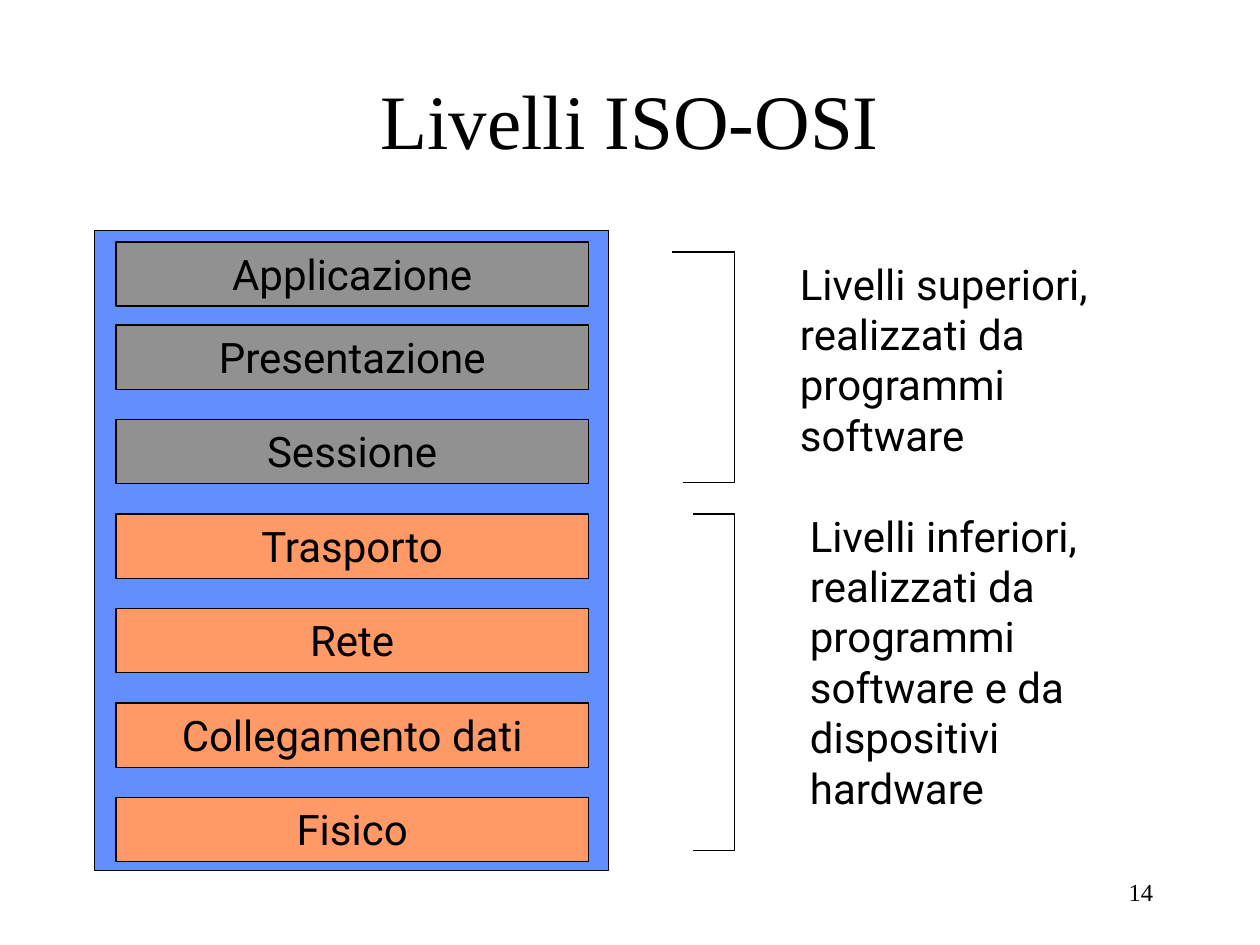
from dataclasses import dataclass

from lxml.etree import SubElement
from pptx import Presentation
from pptx.dml.color import RGBColor
from pptx.enum.shapes import MSO_CONNECTOR, MSO_SHAPE
from pptx.enum.text import MSO_ANCHOR, PP_ALIGN
from pptx.oxml.ns import qn
from pptx.util import Inches, Pt

BLACK, BLUE, GRAY, ORANGE = "000000", "618FFD", "919191", "FF9966"
SANS, SERIF = "Roboto", "Times New Roman"


@dataclass
class Layer:
    name: str
    top: float
    color: str


@dataclass
class Bracket:
    top: float
    bottom: float
    top_left: float
    bottom_left: float


@dataclass
class Label:
    text: str
    box: tuple[float, float, float, float]
    size: int = 24
    font: str = SANS
    align: PP_ALIGN = PP_ALIGN.LEFT
    anchor: MSO_ANCHOR = MSO_ANCHOR.TOP


BRACKET_X = 5.83
UPPER = ["Presentazione", "Sessione"]
LOWER = ["Trasporto", "Rete", "Collegamento dati", "Fisico"]
LAYERS = [Layer("Applicazione", 1.92, GRAY)] + [
    Layer(name, 2.58 + 0.75 * i, GRAY if name in UPPER else ORANGE)
    for i, name in enumerate(UPPER + LOWER)
]
BRACKETS = [Bracket(2, 3.83, 5.33, 5.42), Bracket(4.08, 6.75, 5.5, 5.5)]
LABELS = [
    Label("Livelli ISO-OSI", (0.75, 0.42, 8.5, 1.05), 44, SERIF,
          PP_ALIGN.CENTER, MSO_ANCHOR.MIDDLE),
    Label("Livelli superiori, realizzati da programmi software",
          (6.25, 2, 2.58, 1.7)),
    Label("Livelli inferiori, realizzati da programmi software e da "
          "dispositivi hardware", (6.33, 4, 2.33, 2.9)),
    Label("14", (7.17, 6.83, 2.08, 0.5), 14, SERIF,
          PP_ALIGN.RIGHT, MSO_ANCHOR.MIDDLE),
]


def rgb(color: str) -> RGBColor:
    return RGBColor.from_string(color)


def write(sp, text: str, size: int, font: str, align: PP_ALIGN,
          anchor: MSO_ANCHOR) -> None:
    tf = sp.text_frame
    tf.word_wrap = True
    tf.vertical_anchor = anchor
    p = tf.paragraphs[0]
    p.text = text
    p.alignment = align
    p.font.size = Pt(size)
    p.font.name = font
    p.font.color.rgb = rgb(BLACK)


def add_rect(s, left: float, top: float, width: float, height: float,
             color: str):
    sp = s.shapes.add_shape(MSO_SHAPE.RECTANGLE, Inches(left), Inches(top),
                            Inches(width), Inches(height))
    sp.shadow.inherit = False
    sp.fill.solid()
    sp.fill.fore_color.rgb = rgb(color)
    sp.line.color.rgb = rgb(BLACK)
    sp.line.width = Pt(0.75)
    return sp


def add_layer(s, layer: Layer) -> None:
    sp = add_rect(s, 0.92, layer.top, 3.75, 0.51, layer.color)
    write(sp, layer.name, 24, SANS, PP_ALIGN.CENTER, MSO_ANCHOR.TOP)


def add_bracket(s, b: Bracket) -> None:
    """Draw a square bracket, open to the left, as one group of lines."""
    group = s.shapes.add_group_shape()
    points = [(b.top_left, b.top), (BRACKET_X, b.top),
              (BRACKET_X, b.bottom), (b.bottom_left, b.bottom)]
    for (x1, y1), (x2, y2) in zip(points, points[1:]):
        line = group.shapes.add_connector(
            MSO_CONNECTOR.STRAIGHT, Inches(x1), Inches(y1),
            Inches(x2), Inches(y2))
        line.line.color.rgb = rgb(BLACK)
        line.line.width = Pt(0.75)
        SubElement(line._element.spPr, qn("a:effectLst"))


def add_label(s, label: Label) -> None:
    sp = s.shapes.add_textbox(*map(Inches, label.box))
    write(sp, label.text, label.size, label.font, label.align, label.anchor)


def main() -> None:
    prs = Presentation()
    prs.slide_width, prs.slide_height = Inches(10), Inches(7.5)
    s = prs.slides.add_slide(prs.slide_layouts[6])
    add_rect(s, 0.75, 1.83, 4.08, 5.08, BLUE)
    for layer in LAYERS:
        add_layer(s, layer)
    for bracket in BRACKETS:
        add_bracket(s, bracket)
    for label in LABELS:
        add_label(s, label)
    prs.save("out.pptx")


if __name__ == "__main__":
    main()
